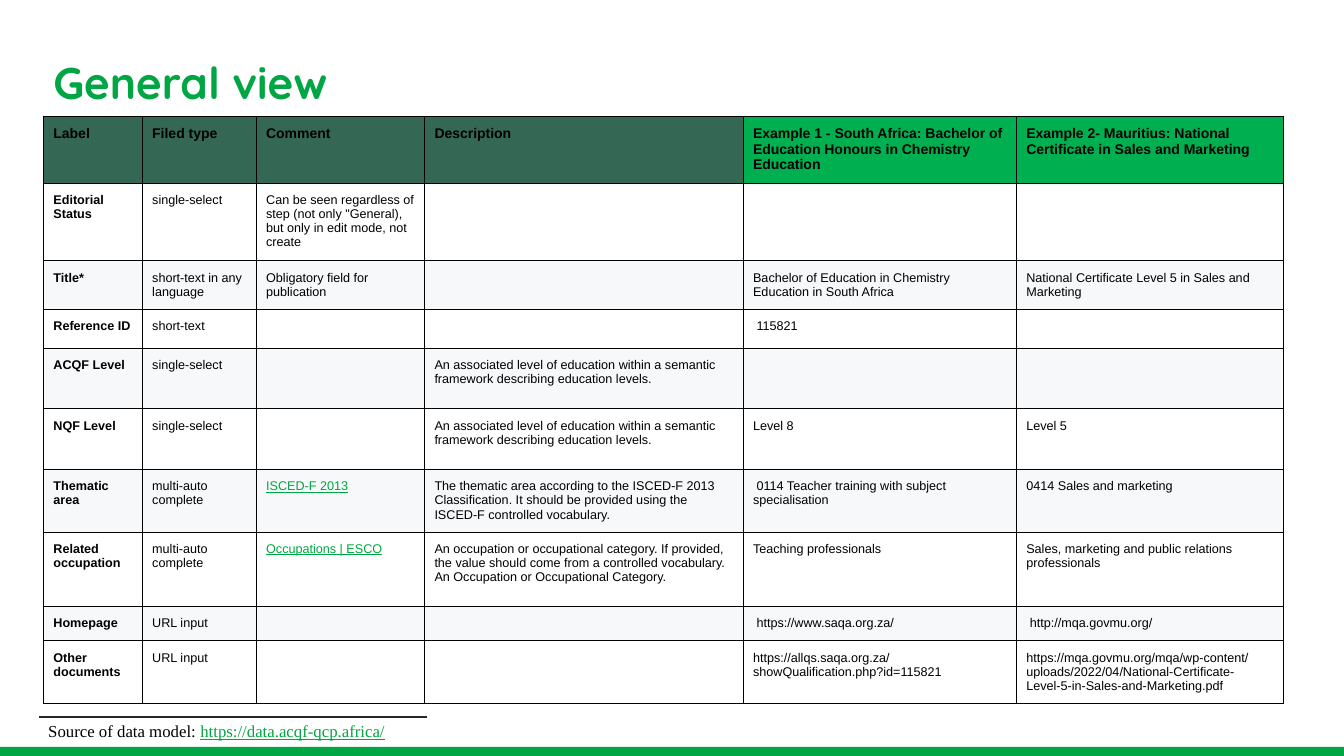
from lxml import etree
from pptx import Presentation
from pptx.dml.color import RGBColor
from pptx.enum import shapes, text
from pptx.oxml import parse_xml
from pptx.oxml.ns import nsdecls, qn
from pptx.util import Inches, Pt

GREEN = RGBColor(0x00, 0xA6, 0x43)
LINK_GREEN = RGBColor(0x00, 0xA6, 0x42)
HEADER_DARK = RGBColor(0x35, 0x68, 0x54)
HEADER_BRIGHT = RGBColor(0x00, 0xB0, 0x50)
BAND = RGBColor(0xF6, 0xF8, 0xF9)
WHITE = RGBColor(0xFF, 0xFF, 0xFF)
BLACK = RGBColor(0x00, 0x00, 0x00)
RULE = RGBColor(0x24, 0x28, 0x2A)

COLUMN_WIDTHS = [0.98, 1.13, 1.67, 3.16, 2.71, 2.65]
ROW_HEIGHTS = [0.66, 0.77, 0.47, 0.39, 0.6, 0.6, 0.61, 0.74, 0.34, 0.62]
LEVEL = "An associated level of education within a semantic framework describing education levels."
LINKS = ("ISCED-F 2013", "Occupations | ESCO")
ROWS = [
    ["Label", "Filed type", "Comment", "Description",
     "Example 1 - South Africa: Bachelor of Education Honours in Chemistry Education",
     "Example 2- Mauritius: National Certificate in Sales and Marketing"],
    ["Editorial Status", "single-select",
     'Can be seen regardless of step (not only "General), but only in edit mode, not create',
     "", "", ""],
    ["Title*", "short-text in any language", "Obligatory field for publication", "",
     "Bachelor of Education in Chemistry Education in South Africa",
     "National Certificate Level 5 in Sales and Marketing"],
    ["Reference ID", "short-text", "", "", " 115821", ""],
    ["ACQF Level", "single-select", "", LEVEL, "", ""],
    ["NQF Level", "single-select", "", LEVEL, "Level 8", "Level 5"],
    ["Thematic area", "multi-auto complete", LINKS[0],
     "The thematic area according to the ISCED-F 2013 Classification. "
     "It should be provided using the ISCED-F controlled vocabulary.",
     " 0114 Teacher training with subject specialisation", "0414 Sales and marketing"],
    ["Related occupation", "multi-auto complete", LINKS[1],
     "An occupation or occupational category. If provided, the value should come from "
     "a controlled vocabulary. An Occupation or Occupational Category.",
     "Teaching professionals", "Sales, marketing and public relations professionals"],
    ["Homepage", "URL input", "", "", " https://www.saqa.org.za/", " http://mqa.govmu.org/"],
    ["Other documents", "URL input", "", "",
     "https://allqs.saqa.org.za/showQualification.php?id=115821",
     "https://mqa.govmu.org/mqa/wp-content/uploads/2022/04/"
     "National-Certificate-Level-5-in-Sales-and-Marketing.pdf"],
]


def add_run(paragraph, words, color, **font_values):
    run = paragraph.add_run()
    run.text = words
    run.font.color.rgb = color
    for name, value in font_values.items():
        setattr(run.font, name, value)


def set_margins(target, side, upright):
    target.margin_left = target.margin_right = Inches(side)
    target.margin_top = target.margin_bottom = Inches(upright)


presentation = Presentation()
presentation.slide_width = Inches(13.33)
presentation.slide_height = Inches(7.5)
slide = presentation.slides.add_slide(presentation.slide_layouts[5])

# Green bar along the bottom edge
bar = slide.shapes.add_shape(shapes.MSO_SHAPE.RECTANGLE, 0, Inches(7.41),
                             Inches(13.33), Inches(0.09))
bar.shadow.inherit = False
bar.fill.solid()
bar.fill.fore_color.rgb = GREEN
bar.line.fill.background()

# Rule above the source note
rule = slide.shapes.add_connector(shapes.MSO_CONNECTOR.STRAIGHT, Inches(0.39), Inches(7.11),
                                  Inches(4.24), Inches(7.11))
rule.line.color.rgb = RULE
rule.line.width = Pt(1.5)
etree.SubElement(rule._element.spPr, qn("a:effectLst"))

# Title
title = slide.shapes.title
title.left, title.top, title.width, title.height = map(Inches, (0.43, 0.52, 10.3, 0.64))
title_frame = title.text_frame
title_frame.auto_size = text.MSO_AUTO_SIZE.NONE
title_frame.vertical_anchor = text.MSO_ANCHOR.MIDDLE
set_margins(title_frame, 0.1, 0.05)
title_paragraph = title_frame.paragraphs[0]
title_paragraph.alignment = text.PP_ALIGN.LEFT
title_paragraph.line_spacing = 0.9
add_run(title_paragraph, "General view", GREEN, name="Quicksand", size=Pt(31.6), bold=True)

# Table of fields with two examples
table = slide.shapes.add_table(len(ROWS), len(COLUMN_WIDTHS), Inches(0.43), Inches(1.15),
                               Inches(sum(COLUMN_WIDTHS)), Inches(sum(ROW_HEIGHTS))).table
table.first_row = table.horz_banding = False
for column, width in zip(table.columns, COLUMN_WIDTHS):
    column.width = Inches(width)
for row, height in zip(table.rows, ROW_HEIGHTS):
    row.height = Inches(height)

for row_index, row_words in enumerate(ROWS):
    is_header = row_index == 0
    for column_index, words in enumerate(row_words):
        cell = table.cell(row_index, column_index)
        margin = 0.1 if words else 0
        set_margins(cell, margin, margin)
        for edge in ("lnL", "lnR", "lnT", "lnB"):
            cell._tc.get_or_add_tcPr().append(parse_xml(
                f'<a:{edge} {nsdecls("a")} w="7620"><a:solidFill>'
                f'<a:srgbClr val="{BLACK}"/></a:solidFill></a:{edge}>'))
        cell.fill.solid()
        if is_header:
            cell.fill.fore_color.rgb = HEADER_DARK if column_index < 4 else HEADER_BRIGHT
        else:
            cell.fill.fore_color.rgb = WHITE if row_index % 2 else BAND
        if words:
            is_link = words in LINKS
            add_run(cell.text_frame.paragraphs[0], words, LINK_GREEN if is_link else BLACK,
                    name="Arial", size=Pt(10 if is_header else 9),
                    bold=is_header or column_index == 0, underline=is_link)

# Source note
note = slide.shapes.add_textbox(Inches(0.38), Inches(7.05), Inches(5.22), Inches(0.4))
note_frame = note.text_frame
note_frame.word_wrap = True
set_margins(note_frame, 0.1, 0.1)
note_paragraph = note_frame.paragraphs[0]
note_font = {"name": "Times New Roman", "size": Pt(12)}
add_run(note_paragraph, "Source of data model: ", BLACK, **note_font)
add_run(note_paragraph, "https://data.acqf-qcp.africa/", LINK_GREEN, underline=True, **note_font)

presentation.save("out.pptx")
